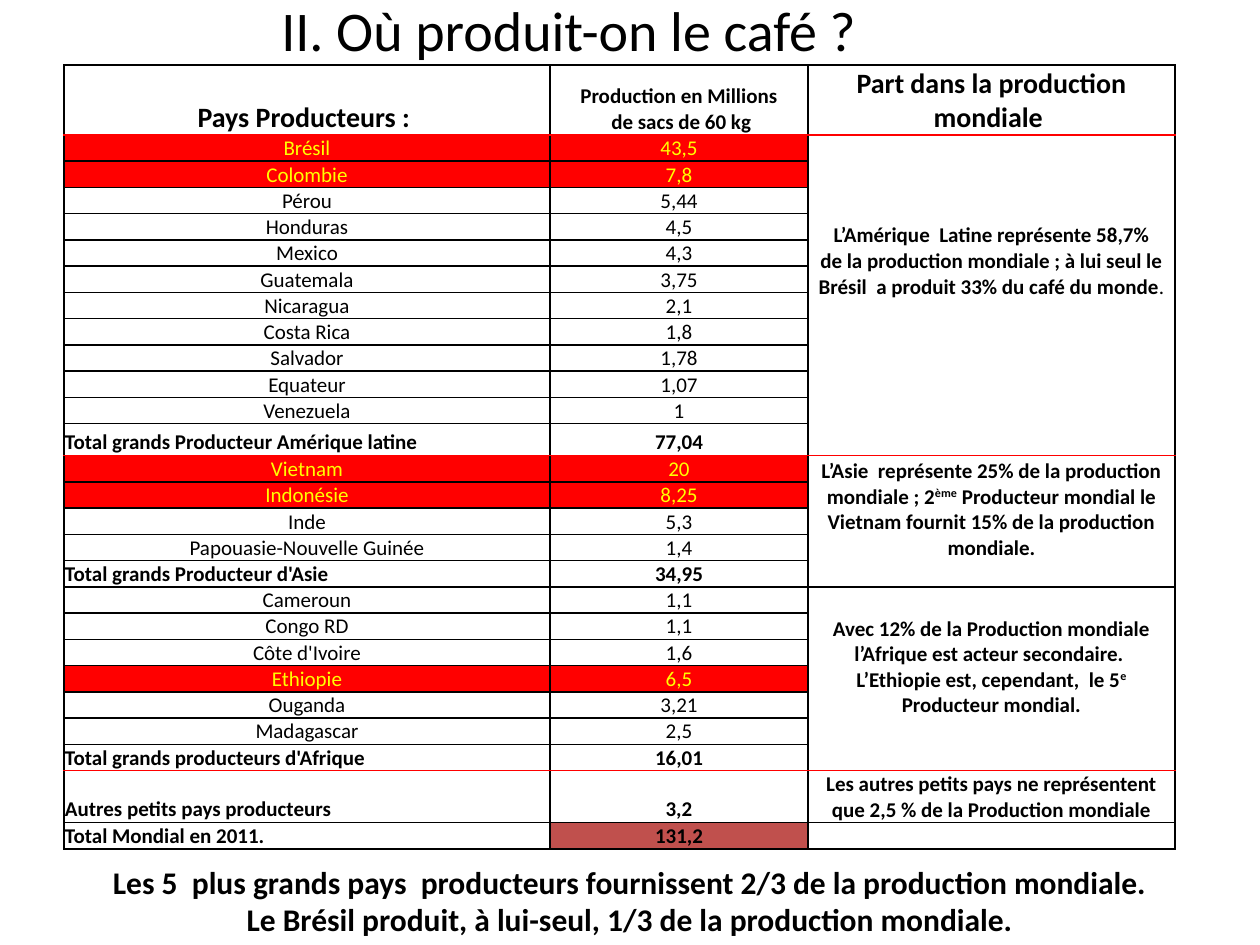
import pptx
import pptx.dml.color
import pptx.enum.text
import pptx.oxml.ns
import pptx.util
from lxml import etree

RGB = pptx.dml.color.RGBColor
BLACK = RGB(0x00, 0x00, 0x00)
RED = RGB(0xFF, 0x00, 0x00)
YELLOW = RGB(0xFF, 0xFF, 0x00)
BRICK = RGB(0xC0, 0x50, 0x4D)
ALIGN = pptx.enum.text.PP_ALIGN
ANCHOR = pptx.enum.text.MSO_ANCHOR
SCALE = 914400 / 126
LINE = 26  # height of one 12 pt line, in px

# Country rows of each region, its total, its comment and the lines kept free below
REGIONS = [
    ([("Brésil", "43,5"), ("Colombie", "7,8"), ("Pérou", "5,44"), ("Honduras", "4,5"),
      ("Mexico", "4,3"), ("Guatemala", "3,75"), ("Nicaragua", "2,1"), ("Costa Rica", "1,8"),
      ("Salvador", "1,78"), ("Equateur", "1,07"), ("Venezuela", "1")],
     ("Total grands Producteur Amérique latine", "77,04"),
     ["L’Amérique  Latine représente 58,7%",
      [("de la production mondiale ; à lui seul le Brésil  a produit 33% du café du monde", ""),
       (".", "thin")]], 6),
    ([("Vietnam", "20"), ("Indonésie", "8,25"), ("Inde", "5,3"),
      ("Papouasie-Nouvelle Guinée", "1,4")],
     ("Total grands Producteur d'Asie", "34,95"),
     [[("L’Asie  représente 25% de la production mondiale ; 2", ""), ("ème", "sup"),
       (" Producteur mondial le Vietnam fournit 15% de la production mondiale.", "")]], 1),
    ([("Cameroun", "1,1"), ("Congo RD", "1,1"), ("Côte d'Ivoire", "1,6"), ("Ethiopie", "6,5"),
      ("Ouganda", "3,21"), ("Madagascar", "2,5")],
     ("Total grands producteurs d'Afrique", "16,01"),
     ["Avec 12% de la Production mondiale l’Afrique est acteur secondaire. ",
      [("L’Ethiopie est, cependant,  le 5", ""), ("e", "sup"), (" Producteur mondial.", "")]], 2),
]
TOP_FIVE = {"Brésil", "Colombie", "Vietnam", "Indonésie", "Ethiopie"}


def px(n):
    return pptx.util.Emu(round(n * SCALE))


class Deck:
    font = "Calibri"

    def __init__(self, wide, high):
        self.prs = pptx.Presentation()
        self.prs.slide_width, self.prs.slide_height = px(wide), px(high)
        self.slide = self.prs.slides.add_slide(self.prs.slide_layouts[6])

    def text(self, frame, paras, size, bold=False, color=BLACK, align=ALIGN.CENTER):
        for i, runs in enumerate(paras):
            para = frame.add_paragraph() if i else frame.paragraphs[0]
            para.alignment = align
            font = para.font
            font.name, font.size, font.bold = self.font, pptx.util.Pt(size), bold
            font.color.rgb = color
            for words, kind in [(runs, "")] if isinstance(runs, str) else runs:
                if not words:
                    # An empty cell keeps the height of its small text
                    para._p.get_or_add_endParaRPr().set("sz", str(size * 100))
                    continue
                run = para.add_run()
                run.text = words
                if kind == "thin":
                    run.font.bold = False
                elif kind == "sup":
                    run.font._element.set("baseline", "30000")

    def box(self, left, top, wide, high, paras, size, bold=False):
        shape = self.slide.shapes.add_textbox(px(left), px(top), px(wide), px(high))
        shape.text_frame.word_wrap = True
        shape.text_frame.vertical_anchor = ANCHOR.MIDDLE
        self.text(shape.text_frame, paras, size, bold)

    def grid(self, left, top, cols, rows):
        frame = self.slide.shapes.add_table(
            len(rows), len(cols), px(left), px(top), px(sum(cols)), px(sum(rows)))
        table = frame.table
        table.first_row = table.horz_banding = False
        for col, wide in zip(table.columns, cols):
            col.width = px(wide)
        for row, high in zip(table.rows, rows):
            row.height = px(high)
        return table

    def cell(self, cell, paras, size=12, fill=None, gap=0, **style):
        cell.vertical_anchor = ANCHOR.BOTTOM
        cell.margin_left = cell.margin_top = cell.margin_right = px(1)
        cell.margin_bottom = px(gap)
        if fill is None:
            cell.fill.background()
        else:
            cell.fill.solid()
            cell.fill.fore_color.rgb = fill
        self.text(cell.text_frame, paras, size, **style)

    def edges(self, cell, above, below):
        props = cell._tc.get_or_add_tcPr()
        qn = pptx.oxml.ns.qn
        sides = [("a:lnL", BLACK), ("a:lnR", BLACK), ("a:lnT", above), ("a:lnB", below)]
        for i, (side, color) in enumerate(sides):
            line = etree.Element(qn(side), w="12700")
            solid = etree.SubElement(line, qn("a:solidFill"))
            etree.SubElement(solid, qn("a:srgbClr"), val=str(color))
            props.insert(i, line)


def main():
    deck = Deck(1260, 945)

    # Title
    deck.box(2, -14, 1134, 87, ["II. Où produit-on le café ?"], 32)

    # Table frame: header, regions, small producers, world total
    heights = [70]
    for lands, *_ in REGIONS:
        heights += [LINE] * (len(lands) + 1)
    heights[len(REGIONS[0][0]) + 1] = 32
    heights += [52, LINE]
    table = deck.grid(64, 65, [486, 258, 367], heights)

    # Header
    deck.cell(table.cell(0, 0), ["Pays Producteurs : "], 16, bold=True)
    deck.cell(table.cell(0, 1), ["Production en Millions", " de sacs de 60 kg"], bold=True)
    deck.cell(table.cell(0, 2), ["Part dans la production mondiale "], 16, bold=True)

    # Regions
    row, red = 1, {1}
    for lands, total, note, free in REGIONS:
        last = row + len(lands)
        table.cell(row, 2).merge(table.cell(last, 2))
        deck.cell(table.cell(row, 2), note, gap=free * LINE, bold=True)
        for land, sacks in lands:
            top = land in TOP_FIVE
            for col, words in enumerate((land, sacks)):
                deck.cell(table.cell(row, col), [words], fill=RED if top else None,
                          color=YELLOW if top else BLACK)
            row += 1
        deck.cell(table.cell(row, 0), [total[0]], bold=True, align=ALIGN.LEFT)
        deck.cell(table.cell(row, 1), [total[1]], bold=True)
        row += 1
        red.add(row)
    red.remove(row - len(REGIONS[2][0]) - 1)  # the line between Asia and Africa is black

    # Small producers and world total
    ends = [("Autres petits pays producteurs", "3,2", None,
             "Les autres petits pays ne représentent que 2,5 % de la Production mondiale"),
            ("Total Mondial en 2011.", "131,2", BRICK, "")]
    for land, sacks, fill, note in ends:
        deck.cell(table.cell(row, 0), [land], bold=True, align=ALIGN.LEFT)
        deck.cell(table.cell(row, 1), [sacks], fill=fill, bold=True)
        deck.cell(table.cell(row, 2), [note], bold=True)
        row += 1

    # Borders
    for r in range(len(heights)):
        for c in range(3):
            above, below = (RED if n in red else BLACK for n in (r, r + 1))
            cell = table.cell(r, c)
            if cell.is_merge_origin:
                below = RED if r + cell.span_height in red else BLACK
            deck.edges(cell, above, below)

    # Conclusion
    deck.box(0, 856, 1260, 89, [
        "Les 5  plus grands pays  producteurs fournissent 2/3 de la production mondiale.",
        "Le Brésil produit, à lui-seul, 1/3 de la production mondiale."], 18, bold=True)

    deck.prs.save("out.pptx")


if __name__ == "__main__":
    main()
